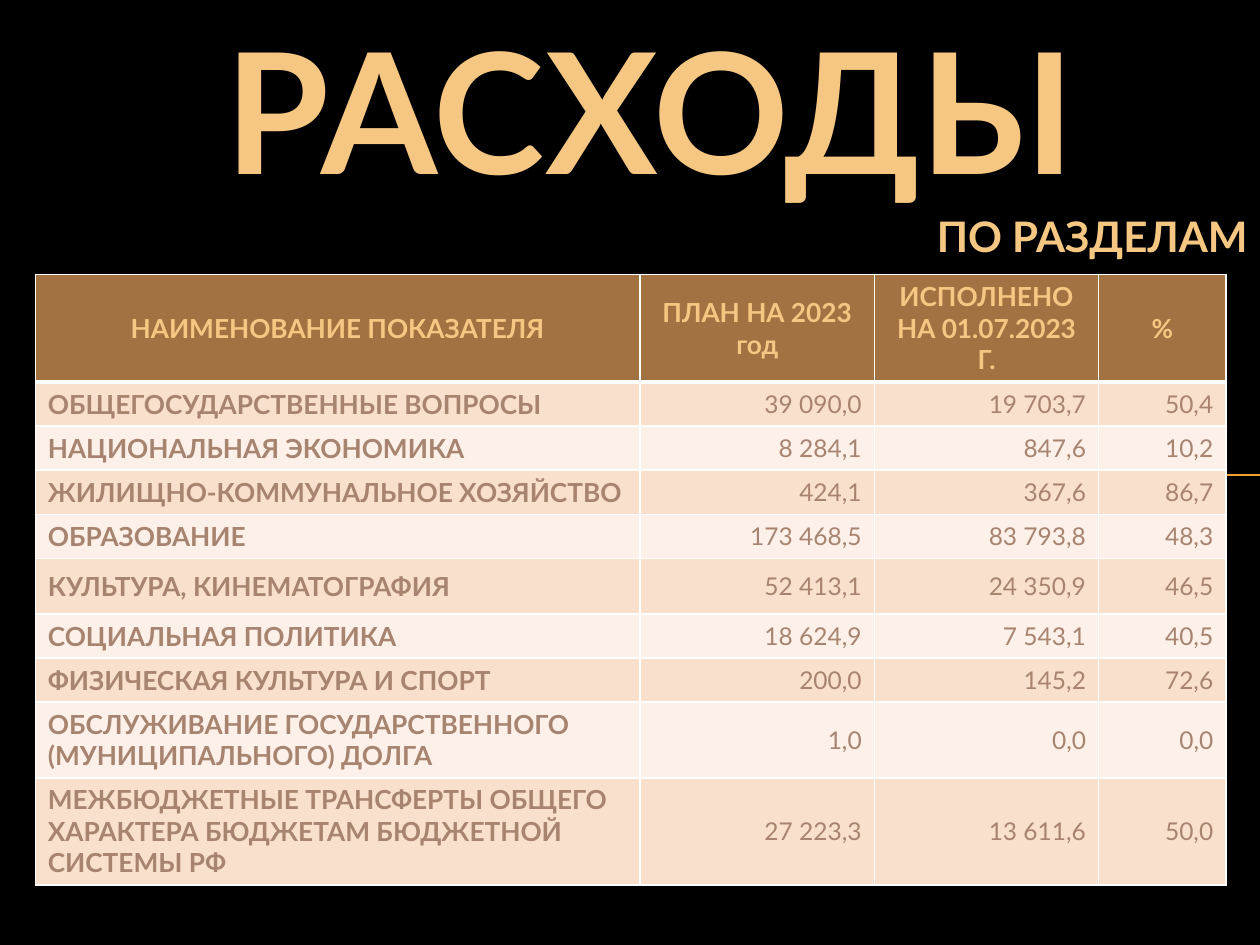
from typing import NamedTuple

from lxml import etree
from pptx import Presentation
from pptx.dml.color import RGBColor
from pptx.enum.shapes import MSO_CONNECTOR
from pptx.enum.text import MSO_ANCHOR, PP_ALIGN
from pptx.oxml.ns import qn
from pptx.util import Inches, Pt

LEFT, CENTER, RIGHT = PP_ALIGN.LEFT, PP_ALIGN.CENTER, PP_ALIGN.RIGHT
TOP, MIDDLE = MSO_ANCHOR.TOP, MSO_ANCHOR.MIDDLE
STRAIGHT = MSO_CONNECTOR.STRAIGHT
TITLE_ONLY = 5

FONT = "Lato"
BLACK, WHITE = "000000", "FFFFFF"
GOLD, ORANGE, BROWN = "F6C782", "F0A22E", "A27242"
BODY_TEXT = "A78470"
BAND_FILLS = ("F9E0CD", "FCF0E8")
COLUMN_WIDTHS = (4.8, 1.86, 1.78, 1.01)
HEADER_HEIGHT = 0.56
HEADERS = ("НАИМЕНОВАНИЕ ПОКАЗАТЕЛЯ", "ПЛАН НА 2023 год",
           "ИСПОЛНЕНО НА 01.07.2023 Г.", "%")


class Style(NamedTuple):
    size: float
    color: str
    bold: bool
    alignment: PP_ALIGN


class Expense(NamedTuple):
    height: float
    name: str
    plan: str
    executed: str
    percent: str


TITLE_STYLE = Style(96, GOLD, True, CENTER)
SUBTITLE_STYLE = Style(24, GOLD, True, RIGHT)
HEADER_STYLE = Style(15, GOLD, True, CENTER)
NAME_STYLE = Style(15, BODY_TEXT, True, LEFT)
VALUE_STYLE = Style(14, BODY_TEXT, False, RIGHT)

EXPENSES = (
    Expense(0.3, "ОБЩЕГОСУДАРСТВЕННЫЕ ВОПРОСЫ", "39 090,0", "19 703,7", "50,4"),
    Expense(0.28, "НАЦИОНАЛЬНАЯ ЭКОНОМИКА", "8 284,1", "847,6", "10,2"),
    Expense(0.29, "ЖИЛИЩНО-КОММУНАЛЬНОЕ ХОЗЯЙСТВО", "424,1", "367,6", "86,7"),
    Expense(0.31, "ОБРАЗОВАНИЕ", "173 468,5", "83 793,8", "48,3"),
    Expense(0.44, "КУЛЬТУРА, КИНЕМАТОГРАФИЯ", "52 413,1", "24 350,9", "46,5"),
    Expense(0.28, "СОЦИАЛЬНАЯ ПОЛИТИКА", "18 624,9", "7 543,1", "40,5"),
    Expense(0.26, "ФИЗИЧЕСКАЯ КУЛЬТУРА И СПОРТ", "200,0", "145,2", "72,6"),
    Expense(0.48, "ОБСЛУЖИВАНИЕ ГОСУДАРСТВЕННОГО (МУНИЦИПАЛЬНОГО) ДОЛГА",
            "1,0", "0,0", "0,0"),
    Expense(0.56, "МЕЖБЮДЖЕТНЫЕ ТРАНСФЕРТЫ ОБЩЕГО ХАРАКТЕРА БЮДЖЕТАМ "
            "БЮДЖЕТНОЙ СИСТЕМЫ РФ", "27 223,3", "13 611,6", "50,0"),
)


def rgb(color: str) -> RGBColor:
    return RGBColor.from_string(color)


def write(text_frame, text: str, style: Style) -> None:
    text_frame.text = text
    paragraph = text_frame.paragraphs[0]
    paragraph.alignment = style.alignment
    font = paragraph.runs[0].font
    font.name, font.size, font.bold = FONT, Pt(style.size), style.bold
    font.color.rgb = rgb(style.color)


def set_borders(cell, widths: dict[str, float]) -> None:
    """Draw white borders; the keys are the side letters L, R, T and B."""
    properties = cell._tc.get_or_add_tcPr()
    for index, (side, width) in enumerate(widths.items()):
        line = etree.Element(qn(f"a:ln{side}"), w=str(Pt(width)))
        fill = etree.SubElement(line, qn("a:solidFill"))
        etree.SubElement(fill, qn("a:srgbClr"), val=WHITE)
        properties.insert(index, line)


def format_cell(cell, text: str, style: Style, fill: str,
                top: float, bottom: float) -> None:
    write(cell.text_frame, text, style)
    cell.vertical_anchor = MIDDLE
    cell.fill.solid()
    cell.fill.fore_color.rgb = rgb(fill)
    set_borders(cell, {"L": 1, "R": 1, "T": top, "B": bottom})


def add_divider(slide) -> None:
    line = slide.shapes.add_connector(
        STRAIGHT, Inches(0.56), Inches(3.77), Inches(10), Inches(3.77))
    line.line.color.rgb = rgb(ORANGE)
    line.line.width = Pt(0.75)
    etree.SubElement(line._element.spPr, qn("a:effectLst"))


def format_title(slide) -> None:
    title = slide.shapes.title
    title.left, title.top = Inches(0.91), Inches(0)
    title.width, title.height = Inches(8.5), Inches(1.49)
    write(title.text_frame, "РАСХОДЫ", TITLE_STYLE)
    title.text_frame.vertical_anchor = TOP


def add_expense_table(slide) -> None:
    heights = (HEADER_HEIGHT, *(expense.height for expense in EXPENSES))
    table = slide.shapes.add_table(
        len(heights), len(COLUMN_WIDTHS), Inches(0.28), Inches(2.18),
        Inches(sum(COLUMN_WIDTHS)), Inches(sum(heights))).table
    for column, width in zip(table.columns, COLUMN_WIDTHS):
        column.width = Inches(width)
    for row, height in zip(table.rows, heights):
        row.height = Inches(height)

    for cell, text in zip(table.rows[0].cells, HEADERS):
        format_cell(cell, text, HEADER_STYLE, BROWN, top=1, bottom=3)
    for index, expense in enumerate(EXPENSES):
        fill = BAND_FILLS[index % 2]
        top = 3 if index == 0 else 1
        texts = (expense.name, expense.plan, expense.executed, expense.percent)
        for column, text in enumerate(texts):
            style = NAME_STYLE if column == 0 else VALUE_STYLE
            format_cell(table.cell(index + 1, column), text, style, fill,
                        top=top, bottom=1)


def add_subtitle(slide) -> None:
    subtitle = slide.shapes.add_textbox(
        Inches(3.7), Inches(1.62), Inches(6.3), Inches(0.5))
    subtitle.text_frame.word_wrap = True
    write(subtitle.text_frame, "ПО РАЗДЕЛАМ", SUBTITLE_STYLE)


def main() -> None:
    presentation = Presentation()
    presentation.slide_width, presentation.slide_height = Inches(10), Inches(7.5)
    slide = presentation.slides.add_slide(presentation.slide_layouts[TITLE_ONLY])
    slide.background.fill.solid()
    slide.background.fill.fore_color.rgb = rgb(BLACK)
    add_divider(slide)
    format_title(slide)
    add_expense_table(slide)
    add_subtitle(slide)
    presentation.save("out.pptx")


if __name__ == "__main__":
    main()
